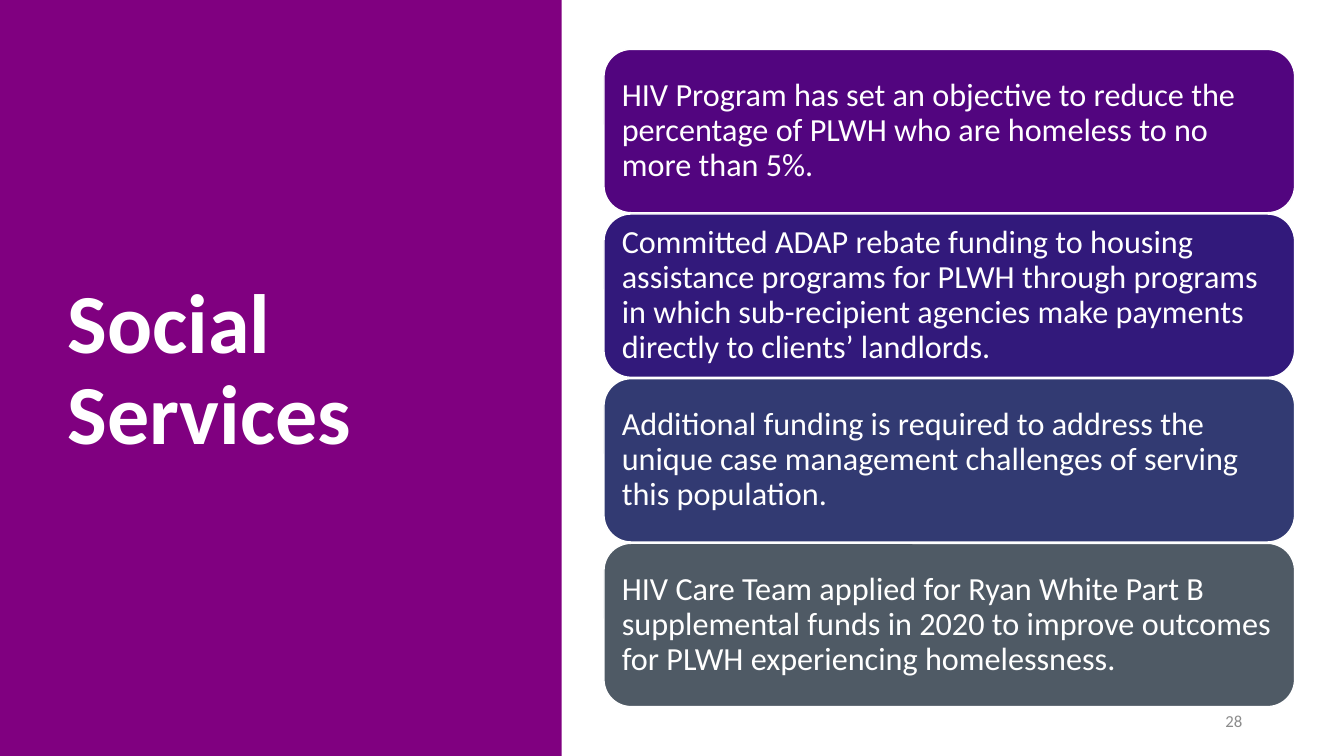
from pptx import Presentation
from pptx.dml.color import RGBColor
from pptx.enum.shapes import MSO_SHAPE as Shape
from pptx.enum.text import MSO_ANCHOR as Anchor, PP_ALIGN as Align
from pptx.util import Inches, Pt


def paint(color_format, value):
    color_format.rgb = RGBColor.from_string(value)


def write(shape, text, size, color="FFFFFF", bold=False, align=Align.LEFT,
          spacing=0.9, inset_x=0.1, inset_y=0.05):
    frame = shape.text_frame
    frame.word_wrap = True
    frame.vertical_anchor = Anchor.MIDDLE
    frame.margin_left = frame.margin_right = Inches(inset_x)
    frame.margin_top = frame.margin_bottom = Inches(inset_y)
    paragraph = frame.paragraphs[0]
    paragraph.alignment = align
    paragraph.line_spacing = spacing
    run = paragraph.add_run()
    run.text = text
    run.font.name = "Calibri"
    run.font.size = Pt(size)
    run.font.bold = bold
    paint(run.font.color, color)


prs = Presentation()
prs.slide_width, prs.slide_height = Inches(13.33), Inches(7.5)
slide = prs.slides.add_slide(prs.slide_layouts[5])
shapes = slide.shapes

# Purple panel, placed behind the title
panel = shapes.add_shape(Shape.RECTANGLE, 0, 0, Inches(5.57), prs.slide_height)
panel.shadow.inherit = False
panel.fill.solid()
paint(panel.fill.fore_color, "800080")
panel.line.fill.background()
title = shapes.title
title._element.addprevious(panel._element)

# Title
title.left, title.top = Inches(0.57), Inches(0.68)
title.width, title.height = Inches(4.16), Inches(6.02)
write(title, "Social Services", 60, bold=True)

# Slide number
page_number = shapes.add_textbox(Inches(9.42), Inches(6.95), Inches(3), Inches(0.4))
write(page_number, "28", 12, color="8C8C8C", align=Align.RIGHT, spacing=1)

# Stacked statements
statements = [
    ("52057F", "HIV Program has set an objective to reduce the percentage of PLWH "
               "who are homeless to no more than 5%."),
    ("32197B", "Committed ADAP rebate funding to housing assistance programs for PLWH "
               "through programs in which sub-recipient agencies make payments "
               "directly to clients’ landlords."),
    ("323A72", "Additional funding is required to address the unique case management "
               "challenges of serving this population."),
    ("4F5A65", "HIV Care Team applied for Ryan White Part B supplemental funds in 2020 "
               "to improve outcomes for PLWH experiencing homelessness."),
]
first_top, pitch = 0.49, 4.9 / 3
for row, (color, statement) in enumerate(statements):
    card = shapes.add_shape(Shape.ROUNDED_RECTANGLE, Inches(5.99),
                            Inches(first_top + row * pitch), Inches(6.85), Inches(1.62))
    card.shadow.inherit = False
    card.fill.solid()
    paint(card.fill.fore_color, color)
    paint(card.line.color, "FFFFFF")
    card.line.width = Pt(1)
    # The rounded corners add 0.08 to each side inset
    write(card, statement, 23, inset_x=0.1, inset_y=0.1)

prs.save("out.pptx")
